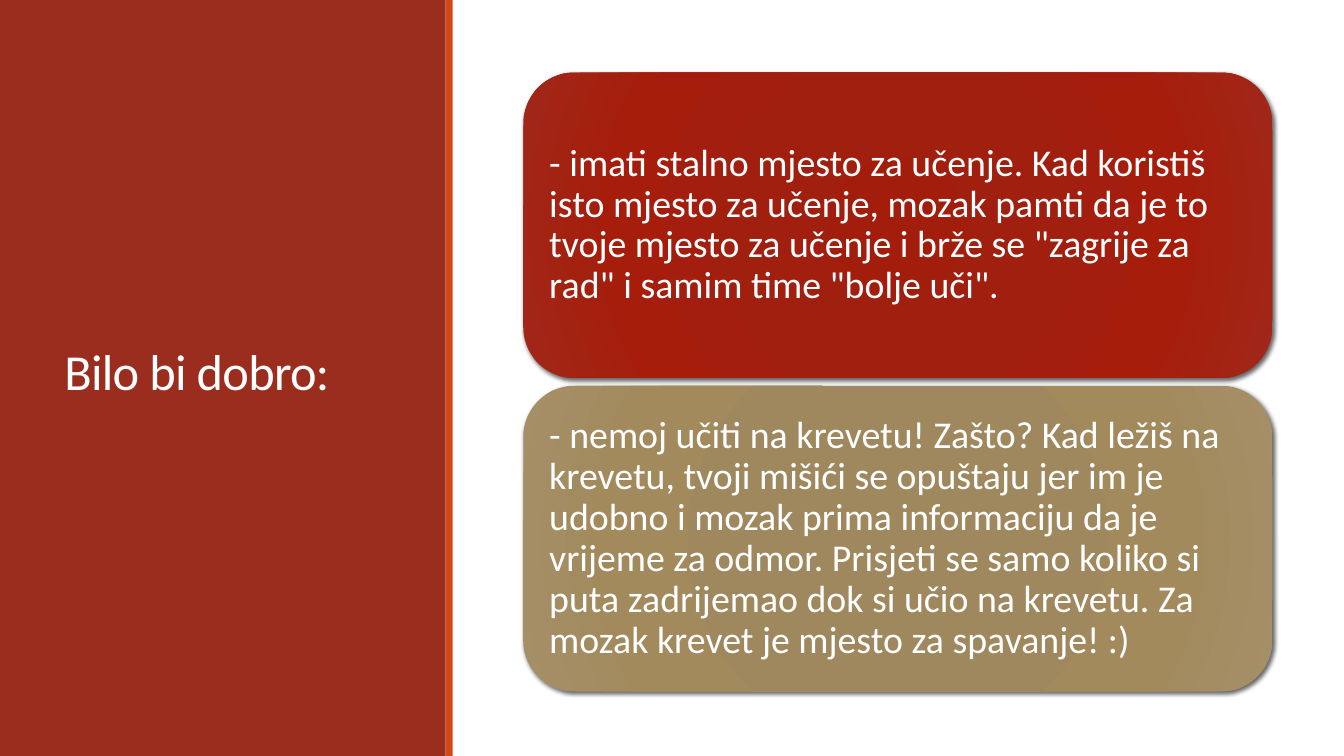
"""Build a slide with a title panel and two stacked study-tip cards."""
from lxml.etree import SubElement
from pptx import Presentation
from pptx.dml.color import RGBColor
from pptx.enum.shapes import MSO_SHAPE
from pptx.enum.text import MSO_ANCHOR, PP_ALIGN
from pptx.oxml.ns import qn
from pptx.util import Inches, Pt

WHITE = RGBColor(0xFF, 0xFF, 0xFF)
BRICK = RGBColor(0x9B, 0x2D, 0x1F)
ORANGE = RGBColor(0xD3, 0x48, 0x17)
BLACK = RGBColor(0x00, 0x00, 0x00)
RED_STOPS = (RGBColor(0xA2, 0x1D, 0x0C), RGBColor(0xA0, 0x1F, 0x0F),
             RGBColor(0xA6, 0x1D, 0x0C), RGBColor(0xA1, 0x28, 0x19))
TAN_STOPS = (RGBColor(0x9F, 0x87, 0x5B), RGBColor(0x9F, 0x88, 0x5D),
             RGBColor(0xA3, 0x8A, 0x5D), RGBColor(0xA5, 0x8F, 0x67))
STOP_POSITIONS = (0, 34, 70, 100)
FONT = "Calibri"
TIPS = (
    ('- imati stalno mjesto za učenje. Kad koristiš isto mjesto za učenje, '
     'mozak pamti da je to tvoje mjesto za učenje i brže se "zagrije za rad" '
     'i samim time "bolje uči".', RED_STOPS),
    ("- nemoj učiti na krevetu! Zašto? Kad ležiš na krevetu, tvoji mišići se "
     "opuštaju jer im je udobno i mozak prima informaciju da je vrijeme za "
     "odmor. Prisjeti se samo koliko si puta zadrijemao dok si učio na krevetu. "
     "Za mozak krevet je mjesto za spavanje! :)", TAN_STOPS),
)


def add_block(page, kind, left, top, width, height):
    """Add a borderless, shadowless shape measured in inches."""
    block = page.shapes.add_shape(kind, Inches(left), Inches(top),
                                  Inches(width), Inches(height))
    block.shadow.inherit = False
    block.line.fill.background()
    return block


def write_text(box, text, size, line_spacing, margin_x, margin_y):
    """Write one white, left-aligned, vertically centred paragraph."""
    frame = box.text_frame
    frame.text = text
    frame.word_wrap = True
    frame.vertical_anchor = MSO_ANCHOR.MIDDLE
    frame.margin_left = frame.margin_right = Inches(margin_x)
    frame.margin_top = frame.margin_bottom = Inches(margin_y)
    para = frame.paragraphs[0]
    para.alignment = PP_ALIGN.LEFT
    para.line_spacing = line_spacing
    span = para.runs[0]
    span.font.name = FONT
    span.font.size = Pt(size)
    span.font.color.rgb = WHITE
    return span


def add_color(parent, color):
    """Append an RGB colour element and return it."""
    return SubElement(parent, qn("a:srgbClr"), val=str(color))


def fill_radial(shape, colors):
    """Give a shape a circular gradient centred on its far corner."""
    shape.fill.gradient()
    gradient = shape._element.spPr.find(qn("a:gradFill"))
    for child in list(gradient):
        gradient.remove(child)
    stops = SubElement(gradient, qn("a:gsLst"))
    for position, color in zip(STOP_POSITIONS, colors):
        add_color(SubElement(stops, qn("a:gs"), pos=str(position * 1000)), color)
    circle = SubElement(gradient, qn("a:path"), path="circle")
    SubElement(circle, qn("a:fillToRect"),
               {side: "100000" for side in ("l", "t", "r", "b")})


def cast_shadow(shape):
    """Give a shape a soft shadow towards the lower right."""
    effects = shape._element.spPr.find(qn("a:effectLst"))
    shadow = SubElement(effects, qn("a:outerShdw"), blurRad=str(Pt(3)),
                        dist=str(Pt(2)), dir="2700000", rotWithShape="0")
    SubElement(add_color(shadow, BLACK), qn("a:alpha"), val="60000")


def add_title_panel(page, left, top, width, height):
    """Add the brick panel, its orange edge and the title."""
    edge_width = 0.07
    panel_width = width - edge_width
    for x, part_width, color in ((left, panel_width, BRICK),
                                 (left + panel_width, edge_width, ORANGE)):
        part = add_block(page, MSO_SHAPE.RECTANGLE, x, top, part_width, height)
        part.fill.solid()
        part.fill.fore_color.rgb = color
    title = page.shapes.add_textbox(Inches(left + 0.54), Inches(top + 0.57),
                                    Inches(3.37), Inches(6.31))
    span = write_text(title, "Bilo bi dobro:", 36, 0.85, 0.1, 0.05)
    span._r.get_or_add_rPr().set("spc", "-50")


def add_tip_cards(page, left, top, width, height):
    """Stack the tip cards evenly in the given box."""
    gap = 0.08
    card_height = (height - gap * (len(TIPS) - 1)) / len(TIPS)
    for index, (text, colors) in enumerate(TIPS):
        card = add_block(page, MSO_SHAPE.ROUNDED_RECTANGLE, left,
                         top + index * (card_height + gap), width, card_height)
        fill_radial(card, colors)
        cast_shadow(card)
        write_text(card, text, 27, 0.9, 0.11, 0.11)


def main():
    """Build and save the deck."""
    deck = Presentation()
    deck.slide_width, deck.slide_height = Inches(13.33), Inches(7.5)
    page = deck.slides.add_slide(deck.slide_layouts[6])
    page.background.fill.solid()
    page.background.fill.fore_color.rgb = WHITE
    add_title_panel(page, 0, 0, 4.49, 7.5)
    add_tip_cards(page, 5.19, 0.72, 7.43, 6.14)
    deck.save("out.pptx")


if __name__ == "__main__":
    main()
